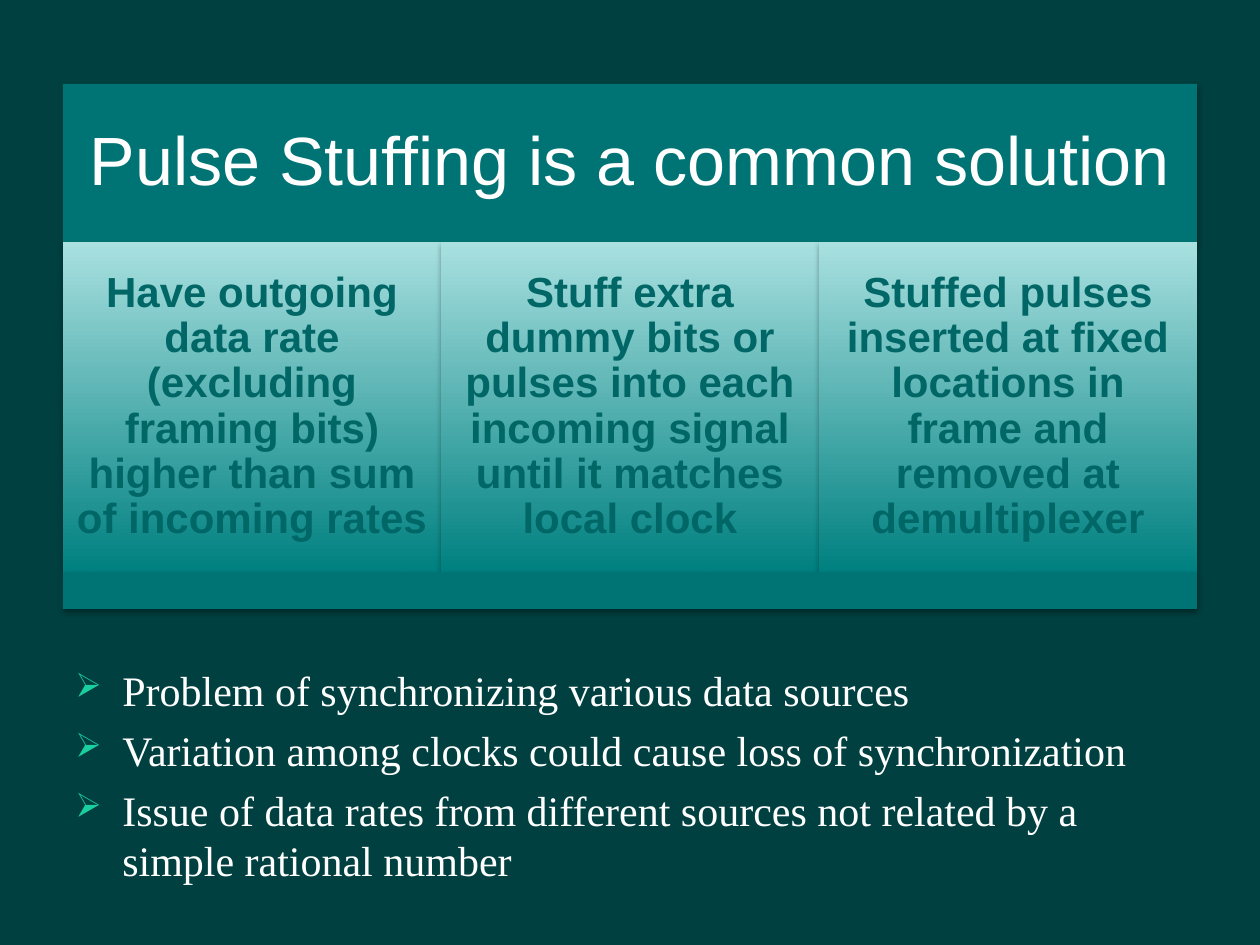
from lxml import etree
from pptx import Presentation
from pptx.dml.color import RGBColor
from pptx.enum.shapes import MSO_SHAPE
from pptx.enum.text import MSO_ANCHOR, PP_ALIGN
from pptx.oxml import parse_xml
from pptx.oxml.ns import nsdecls, qn
from pptx.util import Emu, Pt

RECTANGLE = MSO_SHAPE.RECTANGLE
MIDDLE = MSO_ANCHOR.MIDDLE
CENTER = PP_ALIGN.CENTER
EMU_PER_PX = 914400 / 126

COLORS = {
    "background": "004040",
    "band": "007474",
    "panel_bottom": "008080",
    "panel_top": "A9E0E0",
    "panel_text": "006666",
    "light_text": "FFFFFF",
    "bullet": "1ACE9F",
}
PANEL_TEXTS = [
    "Have outgoing data rate (excluding framing bits) higher than sum of incoming rates",
    "Stuff extra dummy bits or pulses into each incoming signal until it matches local clock",
    "Stuffed pulses inserted at fixed locations in frame and removed at demultiplexer",
]
PROBLEMS = [
    "Problem of synchronizing various data sources",
    "Variation among clocks could cause loss of synchronization",
    "Issue of data rates from different sources not related by a simple rational number",
]
SHADOW = (
    f'<a:outerShdw {nsdecls("a")} blurRad="40000" dist="23000" dir="5400000" rotWithShape="0">'
    '<a:srgbClr val="000000"><a:alpha val="35000"/></a:srgbClr></a:outerShdw>'
)
BLOCK_LEFT, BLOCK_WIDTH = 63, 1134
TITLE_TOP, TITLE_HEIGHT = 84, 158
PANEL_TOP, PANEL_HEIGHT = TITLE_TOP + TITLE_HEIGHT, 330
PANEL_WIDTH = BLOCK_WIDTH // len(PANEL_TEXTS)


def px(length):
    return Emu(round(length * EMU_PER_PX))


def add_block(left, top, width, height, text="", size=24, color="light_text",
              inset=13, is_panel=False):
    """Add a shadowed rectangle: gradient with bold text for a panel, else a flat band."""
    shape = slide.shapes.add_shape(RECTANGLE, px(left), px(top), px(width), px(height))
    if is_panel:
        shape.fill.gradient()
        shape.fill.gradient_angle = 90
        for stop, position, name in zip(shape.fill.gradient_stops, (0, 1),
                                        ("panel_bottom", "panel_top")):
            stop.position = position
            stop.color.rgb = RGBColor.from_string(COLORS[name])
    else:
        shape.fill.solid()
        shape.fill.fore_color.rgb = RGBColor.from_string(COLORS["band"])
    shape.line.fill.background()
    shape.shadow.inherit = False
    shape._element.spPr.find(qn("a:effectLst")).append(parse_xml(SHADOW))
    if not text:
        return
    text_frame = shape.text_frame
    text_frame.word_wrap = True
    text_frame.vertical_anchor = MIDDLE
    text_frame.margin_left = text_frame.margin_right = px(inset)
    text_frame.margin_top = text_frame.margin_bottom = px(inset)
    text_frame.text = text
    paragraph = text_frame.paragraphs[0]
    paragraph.alignment = CENTER
    paragraph.line_spacing = 0.9
    font = paragraph.runs[0].font
    font.name = "Arial"
    font.size = Pt(size)
    font.bold = is_panel
    font.color.rgb = RGBColor.from_string(COLORS[color])


presentation = Presentation()
presentation.slide_width = px(1260)
presentation.slide_height = px(945)
slide = presentation.slides.add_slide(presentation.slide_layouts[6])
slide.background.fill.solid()
slide.background.fill.fore_color.rgb = RGBColor.from_string(COLORS["background"])

# Title band, three panels and footer band
add_block(BLOCK_LEFT, TITLE_TOP, BLOCK_WIDTH, TITLE_HEIGHT,
          "Pulse Stuffing is a common solution", size=39, inset=20)
for column, panel_text in enumerate(PANEL_TEXTS):
    add_block(BLOCK_LEFT + column * PANEL_WIDTH, PANEL_TOP, PANEL_WIDTH, PANEL_HEIGHT,
              panel_text, color="panel_text", is_panel=True)
add_block(BLOCK_LEFT, PANEL_TOP + PANEL_HEIGHT, BLOCK_WIDTH, 37)

# Bulleted list of problems
text_box = slide.shapes.add_textbox(px(BLOCK_LEFT), px(658), px(BLOCK_WIDTH), px(287))
text_frame = text_box.text_frame
text_frame.word_wrap = True
text_frame.text = "\n".join(PROBLEMS)
for paragraph in text_frame.paragraphs:
    paragraph.space_before = Pt(5.5)
    font = paragraph.runs[0].font
    font.name = "Times New Roman"
    font.size = Pt(24)
    font.color.rgb = RGBColor.from_string(COLORS["light_text"])
    properties = paragraph._p.get_or_add_pPr()
    properties.set("marL", str(px(47)))
    properties.set("indent", str(px(-47)))
    bullet_color = etree.SubElement(properties, qn("a:buClr"))
    etree.SubElement(bullet_color, qn("a:srgbClr"), val=COLORS["bullet"])
    etree.SubElement(properties, qn("a:buSzPct"), val="80000")
    etree.SubElement(properties, qn("a:buChar"), char="➢")

presentation.save("out.pptx")
